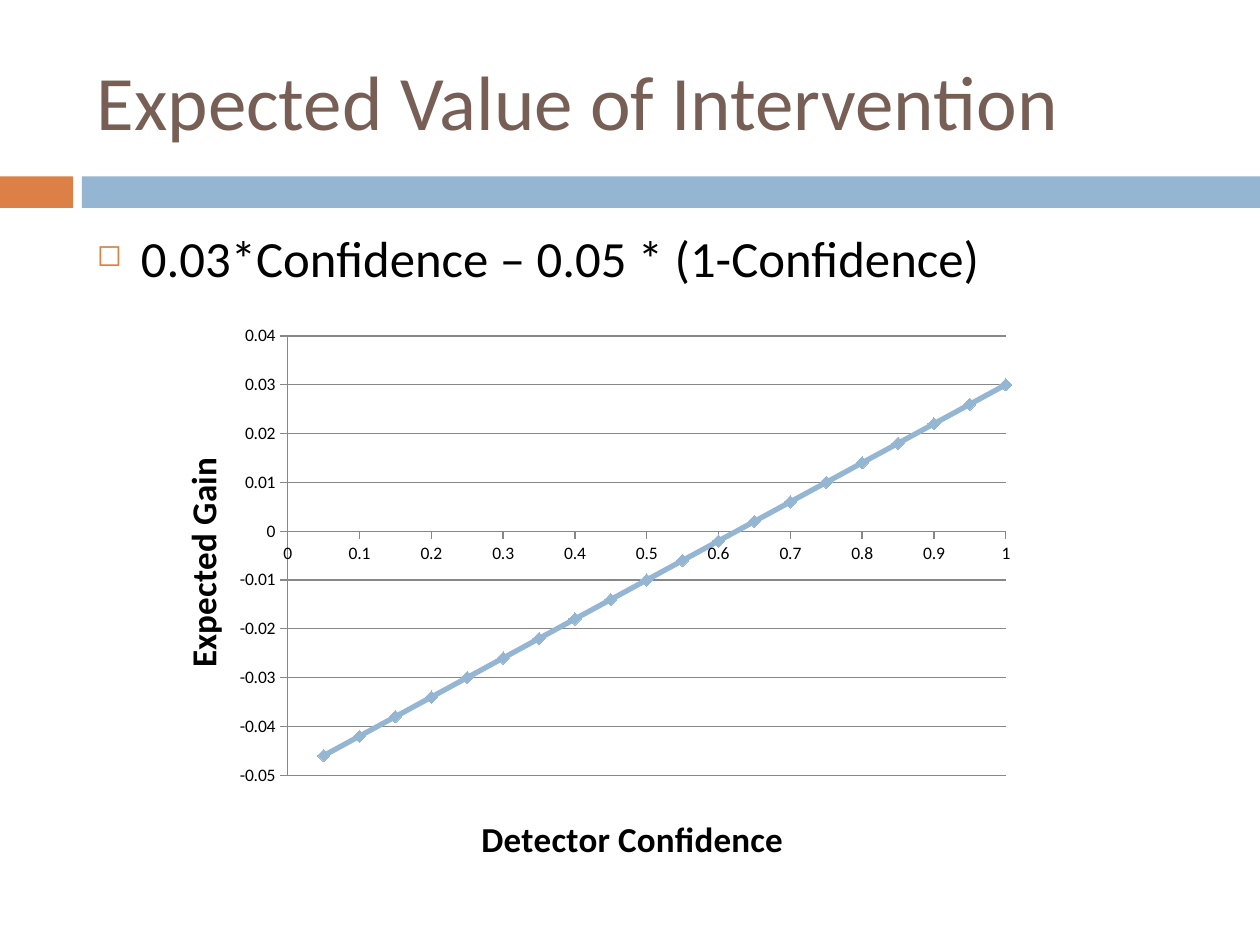
from dataclasses import dataclass

from lxml import etree
from pptx import Presentation
from pptx import util as u
from pptx.chart.data import XyChartData
from pptx.dml.color import RGBColor
from pptx.enum import chart as charts, shapes, text
from pptx.oxml.ns import qn


@dataclass(frozen=True)
class Theme:
    font: str = "Calibri"
    title_color: RGBColor = RGBColor(0x77, 0x5F, 0x55)
    accent: RGBColor = RGBColor(0xDD, 0x80, 0x47)
    blue: RGBColor = RGBColor(0x94, 0xB6, 0xD2)
    black: RGBColor = RGBColor(0, 0, 0)
    grid: RGBColor = RGBColor(0x87, 0x87, 0x87)
    title_size: int = 44
    body_size: int = 29
    axis_title_size: int = 20
    label_size: int = 10


THEME = Theme()


def style_font(font, size, color):
    font.name = THEME.font
    font.size = u.Pt(size)
    font.color.rgb = color


def add_bar(slide, left, width, color):
    bar = slide.shapes.add_shape(
        shapes.MSO_SHAPE.RECTANGLE,
        u.Inches(left), u.Inches(1.4), u.Inches(width), u.Inches(0.25),
    )
    bar.shadow.inherit = False
    bar.fill.solid()
    bar.fill.fore_color.rgb = color
    bar.line.fill.background()


def add_text(slide, box, wording, size, color, anchor):
    shape = slide.shapes.add_textbox(*map(u.Inches, box))
    frame = shape.text_frame
    frame.word_wrap = True
    frame.vertical_anchor = anchor
    frame.text = wording
    paragraph = frame.paragraphs[0]
    style_font(paragraph.runs[0].font, size, color)
    return paragraph


def add_bullet(paragraph):
    properties = paragraph._p.get_or_add_pPr()
    indent = u.Inches(0.35)
    properties.set("marL", str(indent))
    properties.set("indent", str(-indent))
    color = etree.SubElement(properties, qn("a:buClr"))
    etree.SubElement(color, qn("a:srgbClr"), val=str(THEME.accent))
    etree.SubElement(properties, qn("a:buSzPct"), val="60000")
    etree.SubElement(properties, qn("a:buChar"), char="◻")


def set_layout(element, index, **settings):
    for layout in element.findall(qn("c:layout")):
        element.remove(layout)
    layout = etree.Element(qn("c:layout"))
    manual = etree.SubElement(layout, qn("c:manualLayout"))
    for name, value in settings.items():
        etree.SubElement(manual, qn(f"c:{name}"), val=str(value))
    element.insert(index, layout)


def style_axis(axis, title, low, high, step, x, y):
    axis.minimum_scale, axis.maximum_scale = low, high
    axis.major_unit = step
    axis.major_tick_mark = charts.XL_TICK_MARK.OUTSIDE
    axis.minor_tick_mark = charts.XL_TICK_MARK.NONE
    axis.tick_label_position = charts.XL_TICK_LABEL_POSITION.NEXT_TO_AXIS
    axis.tick_labels.number_format = "General"
    axis.tick_labels.number_format_is_linked = False
    axis.format.line.color.rgb = THEME.grid
    frame = axis.axis_title.text_frame
    frame.text = title
    font = frame.paragraphs[0].runs[0].font
    style_font(font, THEME.axis_title_size, THEME.black)
    font.bold = True
    set_layout(axis.axis_title._element, 1, xMode="edge", yMode="edge", x=x, y=y)


def add_gain_chart(slide):
    data = XyChartData()
    points = data.add_series("Series 1")
    for step in range(1, 21):
        confidence = round(step / 20, 2)
        gain = 0.03 * confidence - 0.05 * (1 - confidence)
        points.add_data_point(confidence, round(gain, 3))
    chart = slide.shapes.add_chart(
        charts.XL_CHART_TYPE.XY_SCATTER_SMOOTH,
        u.Inches(1.08), u.Inches(2.5), u.Inches(7.08), u.Inches(4.5), data,
    ).chart
    style_font(chart.font, THEME.label_size, THEME.black)
    chart.has_legend = False
    chart.has_title = False

    style_axis(chart.category_axis, "Detector Confidence", 0, 1, 0.1, 0.38, 0.87)
    style_axis(chart.value_axis, "Expected Gain", -0.05, 0.04, 0.01, 0.04, 0.24)
    chart.category_axis.has_major_gridlines = False
    chart.value_axis.has_major_gridlines = True
    chart.value_axis.major_gridlines.format.line.color.rgb = THEME.grid

    plot = chart.plots[0]
    plot.vary_by_categories = False
    series = plot.series[0]
    series.smooth = True
    series.format.line.color.rgb = THEME.blue
    series.format.line.width = u.Pt(3)
    marker = series.marker
    marker.style = charts.XL_MARKER_STYLE.DIAMOND
    marker.size = 7
    marker.format.fill.solid()
    marker.format.fill.fore_color.rgb = THEME.blue
    marker.format.line.color.rgb = THEME.blue

    plot_area = chart._chartSpace.find(".//" + qn("c:plotArea"))
    set_layout(plot_area, 0, layoutTarget="inner", xMode="edge", yMode="edge",
               x=0.17, y=0.037, w=0.805, h=0.775)


def main():
    presentation = Presentation()
    presentation.slide_width = u.Inches(10)
    presentation.slide_height = u.Inches(7.5)
    slide = presentation.slides.add_slide(presentation.slide_layouts[6])
    add_bar(slide, 0, 0.58, THEME.accent)
    add_bar(slide, 0.65, 9.35, THEME.blue)
    add_text(slide, (0.67, 0.25, 8.92, 1.08), "Expected Value of Intervention",
             THEME.title_size, THEME.title_color, text.MSO_ANCHOR.MIDDLE)
    formula = add_text(slide, (0.67, 1.75, 8.92, 4.92),
                       "0.03*Confidence – 0.05 * (1-Confidence)",
                       THEME.body_size, THEME.black, text.MSO_ANCHOR.TOP)
    add_bullet(formula)
    add_gain_chart(slide)
    presentation.save("out.pptx")


if __name__ == "__main__":
    main()
